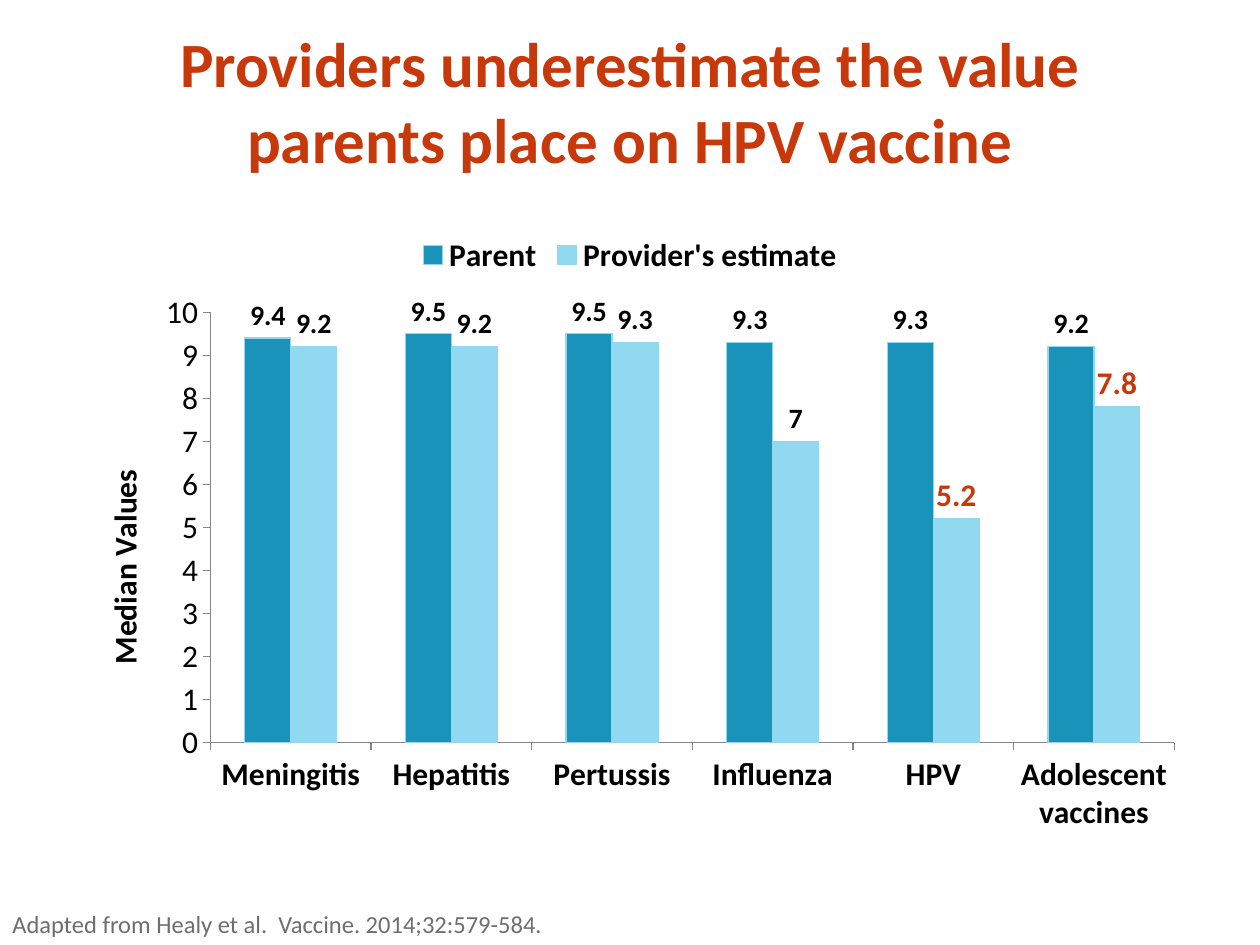
from lxml import etree
from pptx import Presentation
from pptx.chart.data import CategoryChartData
from pptx.dml.color import RGBColor
from pptx.enum.chart import XL_CHART_TYPE, XL_LABEL_POSITION, XL_LEGEND_POSITION, XL_TICK_MARK
from pptx.enum.text import MSO_ANCHOR, PP_ALIGN
from pptx.oxml.ns import qn
from pptx.util import Cm, Pt

FONT = "Calibri"
RUST = RGBColor(0xC7, 0x38, 0x0B)
TEAL = RGBColor(0x19, 0x93, 0xB9)
SKY = RGBColor(0x90, 0xD9, 0xF0)
BLACK = RGBColor(0, 0, 0)
AXIS_GRAY = RGBColor(0x86, 0x86, 0x86)
SOURCE_GRAY = RGBColor(0x6E, 0x6E, 0x6E)

CATEGORIES = ["Meningitis", "Hepatitis", "Pertussis", "Influenza", "HPV", "Adolescent vaccines"]
PARENT = [9.4, 9.5, 9.5, 9.3, 9.3, 9.2]
PROVIDER = [9.2, 9.2, 9.3, 7, 5.2, 7.8]
HIGHLIGHTED = [4, 5]


def style_font(font, size, color=BLACK, bold=False):
    font.name = FONT
    font.size = Pt(size)
    font.bold = bold
    font.color.rgb = color


def add_text(slide, box, text, size, color, bold=False,
             align=PP_ALIGN.LEFT, anchor=MSO_ANCHOR.TOP):
    frame = slide.shapes.add_textbox(*box).text_frame
    frame.word_wrap = True
    frame.vertical_anchor = anchor
    paragraph = frame.paragraphs[0]
    paragraph.alignment = align
    run = paragraph.add_run()
    run.text = text
    style_font(run.font, size, color, bold)


def set_layout(parent, index, **settings):
    """Give a chart part a manual layout, in fractions of the chart."""
    for old in parent.findall(qn("c:layout")):
        parent.remove(old)
    layout = etree.Element(qn("c:layout"))
    manual = etree.SubElement(layout, qn("c:manualLayout"))
    for tag, value in settings.items():
        etree.SubElement(manual, qn(f"c:{tag}")).set("val", str(value))
    parent.insert(index, layout)


def style_axes(chart):
    for axis, bold in ((chart.category_axis, True), (chart.value_axis, False)):
        axis.has_major_gridlines = False
        axis.major_tick_mark = XL_TICK_MARK.OUTSIDE
        axis.minor_tick_mark = XL_TICK_MARK.NONE
        axis.format.line.color.rgb = AXIS_GRAY
        axis.format.line.width = Pt(0.75)
        style_font(axis.tick_labels.font, 18, bold=bold)

    values = chart.value_axis
    values.minimum_scale, values.maximum_scale, values.major_unit = 0, 10, 1
    run = values.axis_title.text_frame.paragraphs[0].add_run()
    run.text = "Median Values"
    style_font(run.font, 18, bold=True)
    set_layout(values.axis_title._element, 1, xMode="edge", yMode="edge", x=0.03, y=0.39)


def style_series(series, color):
    series.format.fill.solid()
    series.format.fill.fore_color.rgb = color
    series.format.line.color.rgb = SKY
    series.format.line.width = Pt(0.75)
    labels = series.data_labels
    labels.show_value = True
    labels.position = XL_LABEL_POSITION.OUTSIDE_END
    style_font(labels.font, 16, bold=True)


def add_value_chart(slide, box):
    data = CategoryChartData()
    data.categories = CATEGORIES
    data.add_series("Parent", PARENT)
    data.add_series("Provider's estimate", PROVIDER)
    chart = slide.shapes.add_chart(XL_CHART_TYPE.COLUMN_CLUSTERED, *box, data).chart
    chart.has_title = False
    style_font(chart.font, 18)

    # Legend
    chart.has_legend = True
    chart.legend.position = XL_LEGEND_POSITION.TOP
    chart.legend.include_in_layout = False
    style_font(chart.legend.font, 18, bold=True)

    # Axes and plot area
    style_axes(chart)
    plot_area = chart._chartSpace.chart.plotArea
    set_layout(plot_area, 0, layoutTarget="inner", xMode="edge", yMode="edge",
               x=0.13, y=0.147, w=0.85, h=0.69)

    # Columns and their labels
    plot = chart.plots[0]
    plot.gap_width = 150
    plot.overlap = 0
    plot.vary_by_categories = False
    for series, color in zip(plot.series, (TEAL, SKY)):
        style_series(series, color)
    for index in HIGHLIGHTED:
        label = plot.series[1].points[index].data_label
        style_font(label.font, 18, RUST, bold=True)
        label.position = XL_LABEL_POSITION.OUTSIDE_END


def build_slide(slide, left, top):
    # Title
    add_text(slide, (left + Cm(1.27), top + Cm(0.43), Cm(22.86), Cm(3.18)),
             "Providers underestimate the value parents place on HPV vaccine",
             36, RUST, True, PP_ALIGN.CENTER, MSO_ANCHOR.MIDDLE)
    # Chart
    add_value_chart(slide, (left + Cm(1.27), top + Cm(4.45), Cm(22.86), Cm(12.57)))
    # Source
    add_text(slide, (left, top + Cm(18.21), Cm(22.86), Cm(1.07)),
             "Adapted from Healy et al.  Vaccine. 2014;32:579-584.", 14, SOURCE_GRAY)


def main():
    deck = Presentation()
    deck.slide_width, deck.slide_height = Cm(25.4), Cm(19.05)
    build_slide(deck.slides.add_slide(deck.slide_layouts[6]), Cm(0), Cm(0))
    deck.save("out.pptx")


if __name__ == "__main__":
    main()
